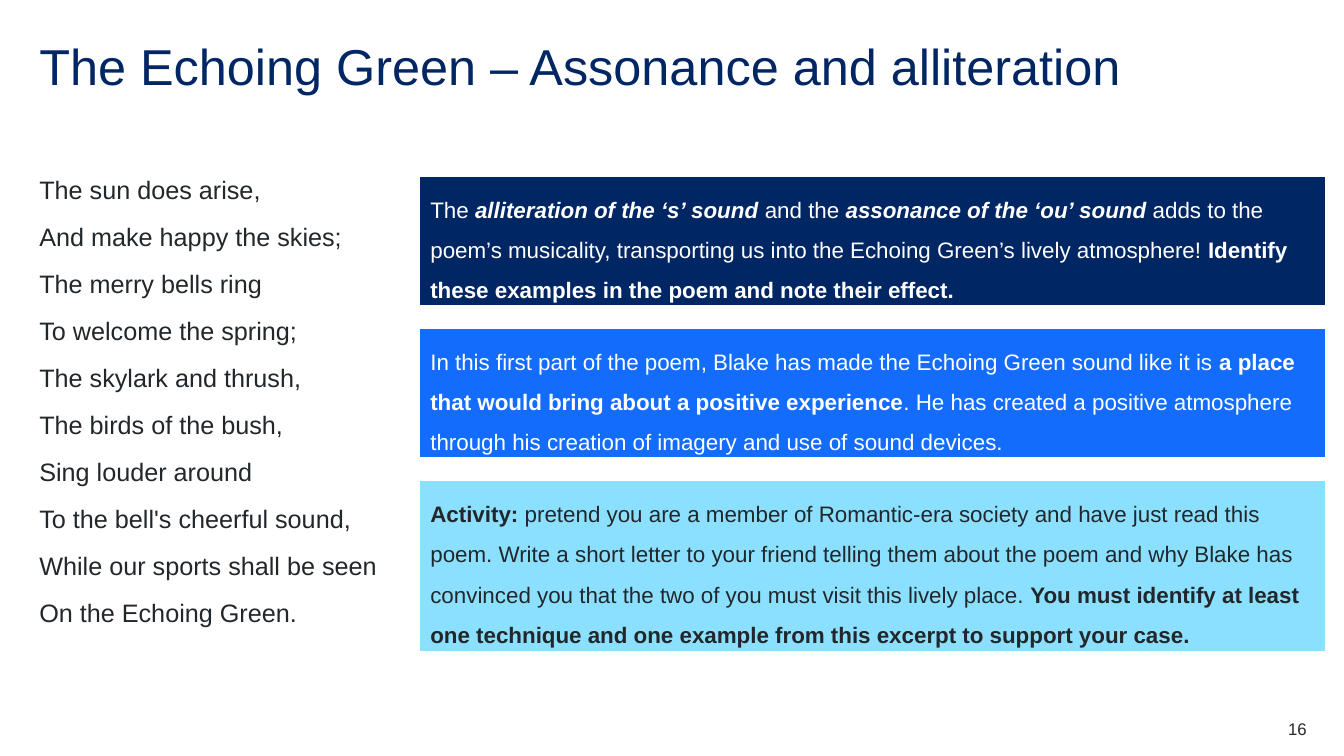
import pptx
import pptx.util
import pptx.dml.color
import pptx.enum.shapes
import pptx.enum.text

Inches = pptx.util.Inches
Pt = pptx.util.Pt
ALIGN = pptx.enum.text.PP_ALIGN
ANCHOR = pptx.enum.text.MSO_ANCHOR
AUTO = pptx.enum.text.MSO_AUTO_SIZE

NAVY, BLUE, SKY, WHITE, INK = "002664", "146CFD", "8CE0FF", "FFFFFF", "22272B"

POEM = [
    "The sun does arise,",
    "And make happy the skies;",
    "The merry bells ring",
    "To welcome the spring;",
    "The skylark and thrush,",
    "The birds of the bush,",
    "Sing louder around",
    "To the bell's cheerful sound,",
    "While our sports shall be seen",
    "On the Echoing Green.",
]

PANELS = [
    (NAVY, WHITE, 1.26, [
        ("The ", ""),
        ("alliteration of the ‘s’ sound ", "bi"),
        ("and the ", ""),
        ("assonance of the ‘ou’ sound ", "bi"),
        ("adds to the poem’s musicality, transporting us into the Echoing "
         "Green’s lively atmosphere! ", ""),
        ("Identify these examples in the poem and note their effect.", "b"),
    ]),
    (BLUE, WHITE, 1.26, [
        ("In this first part of the poem, Blake has made the Echoing Green "
         "sound like it is ", ""),
        ("a place that would bring about a positive experience", "b"),
        (". He has created a positive atmosphere through his creation of "
         "imagery and use of sound devices.", ""),
    ]),
    (SKY, INK, 1.67, [
        ("Activity: ", "b"),
        ("pretend you are a member of Romantic-era society and have just read "
         "this poem. Write a short letter to your friend telling them about "
         "the poem and why Blake has convinced you that the two of you must "
         "visit this lively place. ", ""),
        ("You must identify at least one technique and one example from this "
         "excerpt to support your case.", "b"),
    ]),
]


def rgb(value):
    return pptx.dml.color.RGBColor.from_string(value)


def apply(target, values):
    for name, value in values.items():
        setattr(target, name, value)


def set_frame(tf, inset=0, **values):
    margins = ("margin_left", "margin_top", "margin_right", "margin_bottom")
    apply(tf, dict.fromkeys(margins, Inches(inset)))
    apply(tf, {"word_wrap": True, "vertical_anchor": ANCHOR.TOP, **values})


def write(p, runs, size, color, **values):
    apply(p, {"alignment": ALIGN.LEFT, **values})
    for text, style in runs:
        r = p.add_run()
        r.text = text
        apply(r.font, {"name": "Arial", "size": Pt(size),
                       "bold": "b" in style, "italic": "i" in style})
        r.font.color.rgb = rgb(color)


def add_title(s, text, left, top, width, height):
    sp = s.shapes.title
    apply(sp, {"left": Inches(left), "top": Inches(top),
               "width": Inches(width), "height": Inches(height)})
    sp.fill.solid()
    sp.fill.fore_color.rgb = rgb(WHITE)
    tf = sp.text_frame
    set_frame(tf, vertical_anchor=ANCHOR.MIDDLE, auto_size=AUTO.NONE)
    write(tf.paragraphs[0], [(text, "")], 36, NAVY, line_spacing=0.9)


def add_lines(s, lines, size, left, top, width, height, **values):
    sp = s.shapes.add_textbox(Inches(left), Inches(top), Inches(width), Inches(height))
    tf = sp.text_frame
    set_frame(tf)
    for i, line in enumerate(lines):
        p = tf.add_paragraph() if i else tf.paragraphs[0]
        write(p, [(line, "")], size, INK, **values)


def add_panels(s, panels, left, top, width, gap):
    for fill, color, height, runs in panels:
        sp = s.shapes.add_shape(pptx.enum.shapes.MSO_SHAPE.RECTANGLE, Inches(left),
                                Inches(top), Inches(width), Inches(height))
        sp.shadow.inherit = False
        sp.fill.solid()
        sp.fill.fore_color.rgb = rgb(fill)
        sp.line.color.rgb = rgb(fill)
        sp.line.width = Pt(1)
        tf = sp.text_frame
        set_frame(tf, auto_size=AUTO.SHAPE_TO_FIT_TEXT, margin_left=Inches(0.1),
                  margin_right=Inches(0.1), margin_top=Inches(0.05),
                  margin_bottom=Inches(0.05))
        write(tf.paragraphs[0], runs, 16, color, line_spacing=1.5, space_after=Pt(6))
        top += height + gap


def main():
    prs = pptx.Presentation()
    apply(prs, {"slide_width": Inches(13.33), "slide_height": Inches(7.5)})
    s = prs.slides.add_slide(prs.slide_layouts.get_by_name("Title Only"))
    add_title(s, "The Echoing Green – Assonance and alliteration", 0.39, 0.39, 12.56, 0.6)
    add_lines(s, POEM, 18, 0.39, 1.73, 4.6, 4.69, space_after=Pt(12))
    add_panels(s, PANELS, 4.17, 1.76, 8.97, 0.25)
    add_lines(s, ["16"], 12, 12.17, 7.13, 0.79, 0.2, alignment=ALIGN.RIGHT)
    prs.save("out.pptx")


if __name__ == "__main__":
    main()
